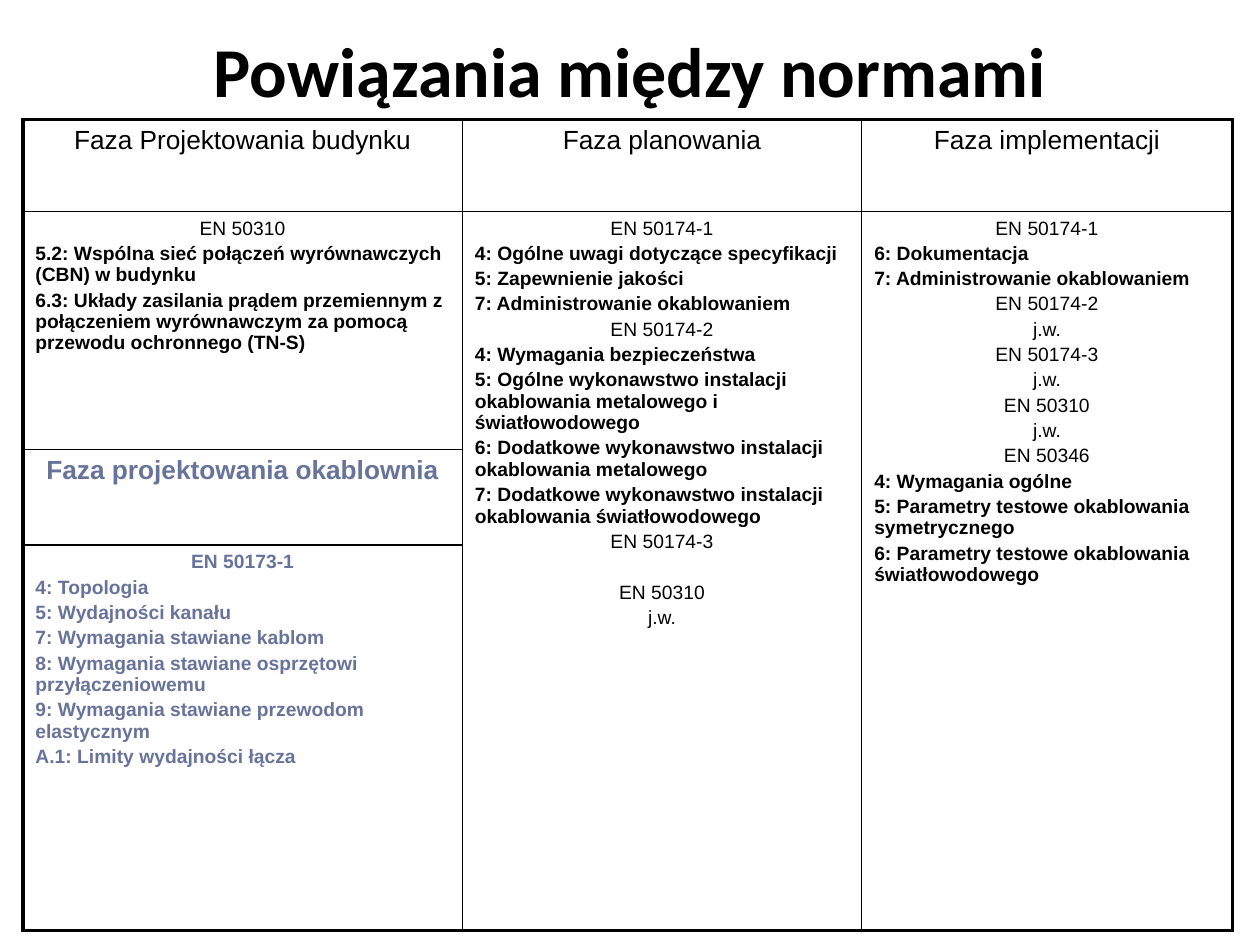
from pptx import Presentation
from pptx.dml.color import RGBColor
from pptx.enum.text import MSO_ANCHOR, PP_ALIGN
from pptx.oxml.ns import qn
from pptx.util import Cm, Pt
from lxml import etree

CENTER, LEFT = PP_ALIGN.CENTER, PP_ALIGN.LEFT
MIDDLE = MSO_ANCHOR.MIDDLE
BLACK, SLATE = "000000", "68739A"
THIN, THICK = Pt(1), Pt(2.25)
COLUMN_WIDTHS = [8.86, 8.05, 7.47]
ROW_HEIGHTS = [1.85, 4.8, 1.93, 7.77]
LAST_ROW, LAST_COLUMN = len(ROW_HEIGHTS) - 1, len(COLUMN_WIDTHS) - 1

CELL_TEXTS = {
    (0, 0): ["Faza Projektowania budynku"],
    (0, 1): ["Faza planowania"],
    (0, 2): ["Faza implementacji"],
    (1, 0): [
        "EN 50310",
        "5.2: Wspólna sieć połączeń wyrównawczych (CBN) w budynku",
        "6.3: Układy zasilania prądem przemiennym z połączeniem wyrównawczym "
        "za pomocą przewodu ochronnego (TN-S)",
    ],
    (1, 1): [
        "EN 50174-1",
        "4: Ogólne uwagi dotyczące specyfikacji",
        "5: Zapewnienie jakości",
        "7: Administrowanie okablowaniem",
        "EN 50174-2",
        "4: Wymagania bezpieczeństwa",
        "5: Ogólne wykonawstwo instalacji okablowania metalowego i światłowodowego",
        "6: Dodatkowe wykonawstwo instalacji okablowania metalowego",
        "7: Dodatkowe wykonawstwo instalacji okablowania światłowodowego",
        "EN 50174-3",
        "EN 50310",
        "j.w.",
    ],
    (1, 2): [
        "EN 50174-1",
        "6: Dokumentacja",
        "7: Administrowanie okablowaniem",
        "EN 50174-2",
        "j.w.",
        "EN 50174-3",
        "j.w.",
        "EN 50310",
        "j.w.",
        "EN 50346",
        "4: Wymagania ogólne",
        "5: Parametry testowe okablowania symetrycznego",
        "6: Parametry testowe okablowania światłowodowego",
    ],
    (2, 0): ["Faza projektowania okablownia"],
    (3, 0): [
        "EN 50173-1",
        "4: Topologia",
        "5: Wydajności kanału",
        "7: Wymagania stawiane kablom",
        "8: Wymagania stawiane osprzętowi przyłączeniowemu",
        "9: Wymagania stawiane przewodom elastycznym",
        "A.1: Limity wydajności łącza",
    ],
}


def write(para, text, color, **formats):
    span = para.add_run()
    span.text = text
    span.font.color.rgb = RGBColor.from_string(color)
    for name, value in formats.items():
        setattr(span.font, name, value)


def add_border(cell, side, width):
    line = etree.SubElement(cell._tc.get_or_add_tcPr(), qn(f"a:ln{side}"), w=str(width))
    fill = etree.SubElement(line, qn("a:solidFill"))
    etree.SubElement(fill, qn("a:srgbClr"), val=BLACK)


deck = Presentation()
deck.slide_width, deck.slide_height = Cm(25.4), Cm(19.05)
page = deck.slides.add_slide(deck.slide_layouts[5])

title = page.shapes.title
title_box = {"left": 0, "top": 0, "width": Cm(25.4), "height": Cm(2.82)}
for name, value in title_box.items():
    setattr(title, name, value)
title.text_frame.vertical_anchor = MIDDLE
heading = title.text_frame.paragraphs[0]
heading.alignment = CENTER
write(heading, "Powiązania między normami", BLACK, name="Calibri", size=Pt(40), bold=True)

frame = page.shapes.add_table(
    len(ROW_HEIGHTS), len(COLUMN_WIDTHS), Cm(0.46), Cm(2.41),
    Cm(sum(COLUMN_WIDTHS)), Cm(sum(ROW_HEIGHTS)),
)
table = frame.table
table.first_row = table.horz_banding = False
for column, width in zip(table.columns, COLUMN_WIDTHS):
    column.width = Cm(width)
for row, height in zip(table.rows, ROW_HEIGHTS):
    row.height = Cm(height)
for c in (1, 2):
    table.cell(1, c).merge(table.cell(LAST_ROW, c))

for r in range(len(ROW_HEIGHTS)):
    for c in range(len(COLUMN_WIDTHS)):
        cell = table.cell(r, c)
        bottom_row = r + cell.span_height - 1 if cell.is_merge_origin else r
        add_border(cell, "L", THICK if c == 0 else THIN)
        add_border(cell, "R", THICK if c == LAST_COLUMN else THIN)
        if not cell.is_spanned:
            add_border(cell, "T", THICK if r == 0 else THIN)
        if not cell.is_spanned or r == LAST_ROW:
            add_border(cell, "B", THICK if bottom_row == LAST_ROW else THIN)
        cell.fill.background()

for (r, c), lines in CELL_TEXTS.items():
    cabling = r >= 2
    size = 15 if r in (0, 2) else 11
    text_frame = table.cell(r, c).text_frame
    for i, text in enumerate(lines):
        para = text_frame.add_paragraph() if i else text_frame.paragraphs[0]
        centered = text.startswith(("Faza", "EN", "j.w."))
        para.alignment = CENTER if centered else LEFT
        para.space_before = Pt(size * 0.2)
        write(para, text, SLATE if cabling else BLACK,
              name="Arial", size=Pt(size), bold=cabling or not centered)

table.cell(1, 1).text_frame.paragraphs[-2].space_before = Pt(16.8)

deck.save("out.pptx")
